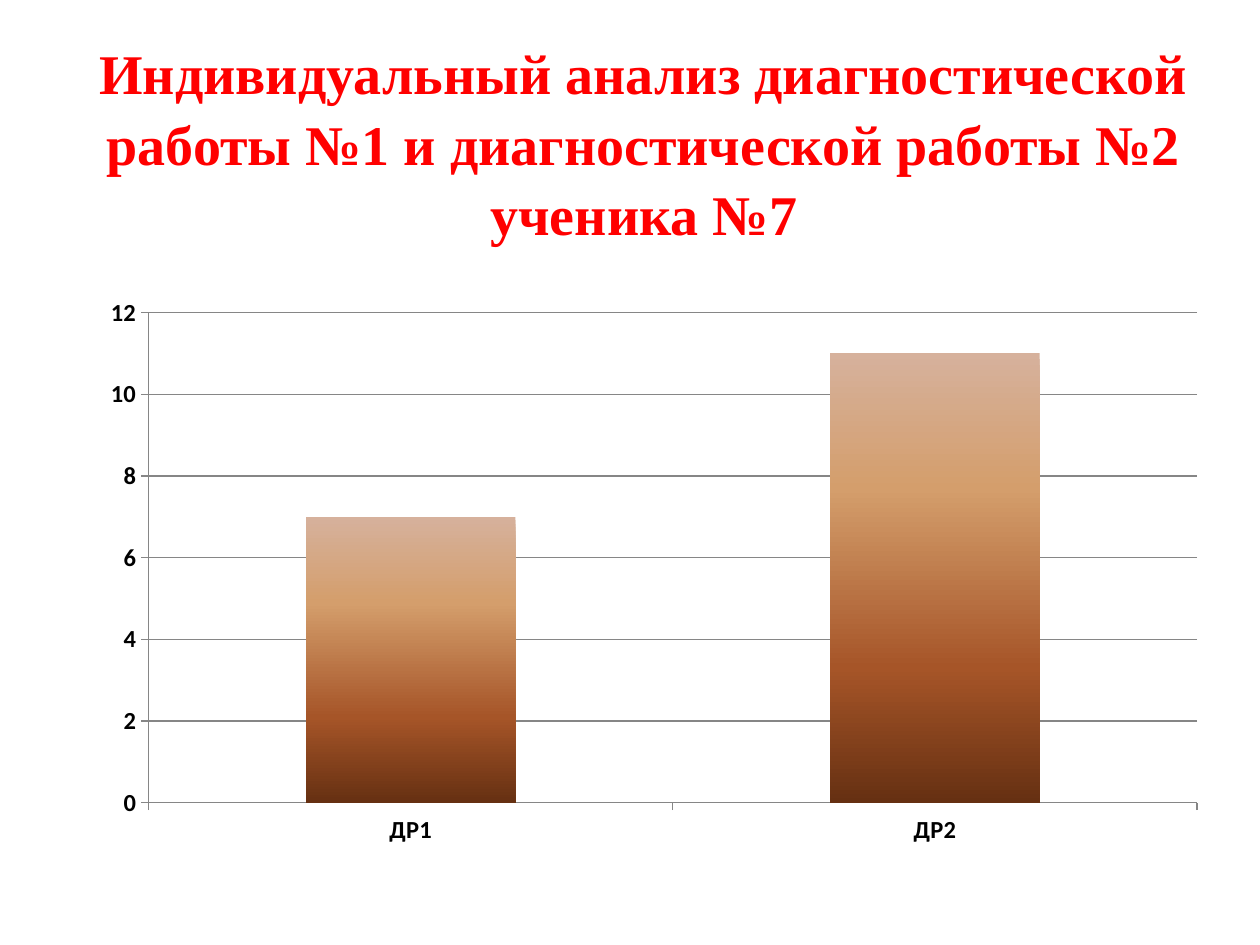
from lxml import etree
from pptx import Presentation
from pptx.chart.data import CategoryChartData
from pptx.dml.color import RGBColor
from pptx.enum.chart import XL_CHART_TYPE, XL_TICK_MARK
from pptx.enum.text import MSO_AUTO_SIZE, PP_ALIGN
from pptx.oxml.ns import qn
from pptx.util import Inches, Pt

COLUMNS = XL_CHART_TYPE.COLUMN_CLUSTERED
TICK_OUTSIDE = XL_TICK_MARK.OUTSIDE
CENTER = PP_ALIGN.CENTER
GROW_SHAPE = MSO_AUTO_SIZE.SHAPE_TO_FIT_TEXT

RED = RGBColor(0xFF, 0x00, 0x00)
BLACK = RGBColor(0x00, 0x00, 0x00)
GRAY = RGBColor(0x86, 0x86, 0x86)

TITLE = ("Индивидуальный анализ диагностической работы №1 "
         "и диагностической работы №2 ученика №7")
SCORES = {"ДР1": 7, "ДР2": 11}
# Percent from the top of the bar, colour
BAR_GRADIENT = [
    (0, RGBColor(0xD6, 0xB1, 0x9C)),
    (30, RGBColor(0xD4, 0x9E, 0x6C)),
    (70, RGBColor(0xA6, 0x55, 0x28)),
    (100, RGBColor(0x66, 0x30, 0x12)),
]


def set_gradient_stops(fill_format, stops):
    """Fill from top to bottom with any number of colour stops."""
    fill_format.fill.gradient()
    gradient = fill_format._element.find(".//" + qn("a:gradFill"))
    stop_list = gradient.find(qn("a:gsLst"))
    for stop in list(stop_list):
        stop_list.remove(stop)
    for percent, color in stops:
        stop = etree.SubElement(stop_list, qn("a:gs"), pos=str(percent * 1000))
        etree.SubElement(stop, qn("a:srgbClr"), val=str(color))
    gradient.find(qn("a:lin")).set("ang", str(90 * 60000))


def add_score_chart(slide):
    data = CategoryChartData()
    data.categories = list(SCORES)
    data.add_series("Series 1", list(SCORES.values()))
    chart = slide.shapes.add_chart(
        COLUMNS, Inches(0.7), Inches(2.27), Inches(8.98), Inches(4.53), data
    ).chart
    chart.has_legend = False
    chart.has_title = False
    chart.font.name = "Calibri"
    chart.font.size = Pt(14)
    chart.font.bold = True
    chart.font.color.rgb = BLACK

    scores_axis = chart.value_axis
    scores_axis.minimum_scale = 0
    scores_axis.maximum_scale = 12
    scores_axis.major_unit = 2
    scores_axis.has_major_gridlines = True
    for axis in (chart.category_axis, scores_axis):
        axis.major_tick_mark = TICK_OUTSIDE
        axis.format.line.color.rgb = GRAY
    scores_axis.major_gridlines.format.line.color.rgb = GRAY

    plot = chart.plots[0]
    plot.gap_width = 150
    plot.vary_by_categories = False
    set_gradient_stops(plot.series[0].format, BAR_GRADIENT)


def add_title(slide):
    frame = slide.shapes.add_textbox(
        Inches(0.62), Inches(0.23), Inches(8.98), Inches(1.72)
    ).text_frame
    frame.word_wrap = True
    frame.auto_size = GROW_SHAPE
    paragraph = frame.paragraphs[0]
    paragraph.text = TITLE
    paragraph.alignment = CENTER
    paragraph.line_spacing = 1.05
    paragraph.font.name = "Times New Roman"
    paragraph.font.size = Pt(32)
    paragraph.font.bold = True
    paragraph.font.color.rgb = RED


def main():
    presentation = Presentation()
    presentation.slide_width = Inches(10)
    presentation.slide_height = Inches(7.5)
    slide = presentation.slides.add_slide(presentation.slide_layouts[6])
    add_score_chart(slide)
    add_title(slide)
    presentation.save("out.pptx")


if __name__ == "__main__":
    main()
